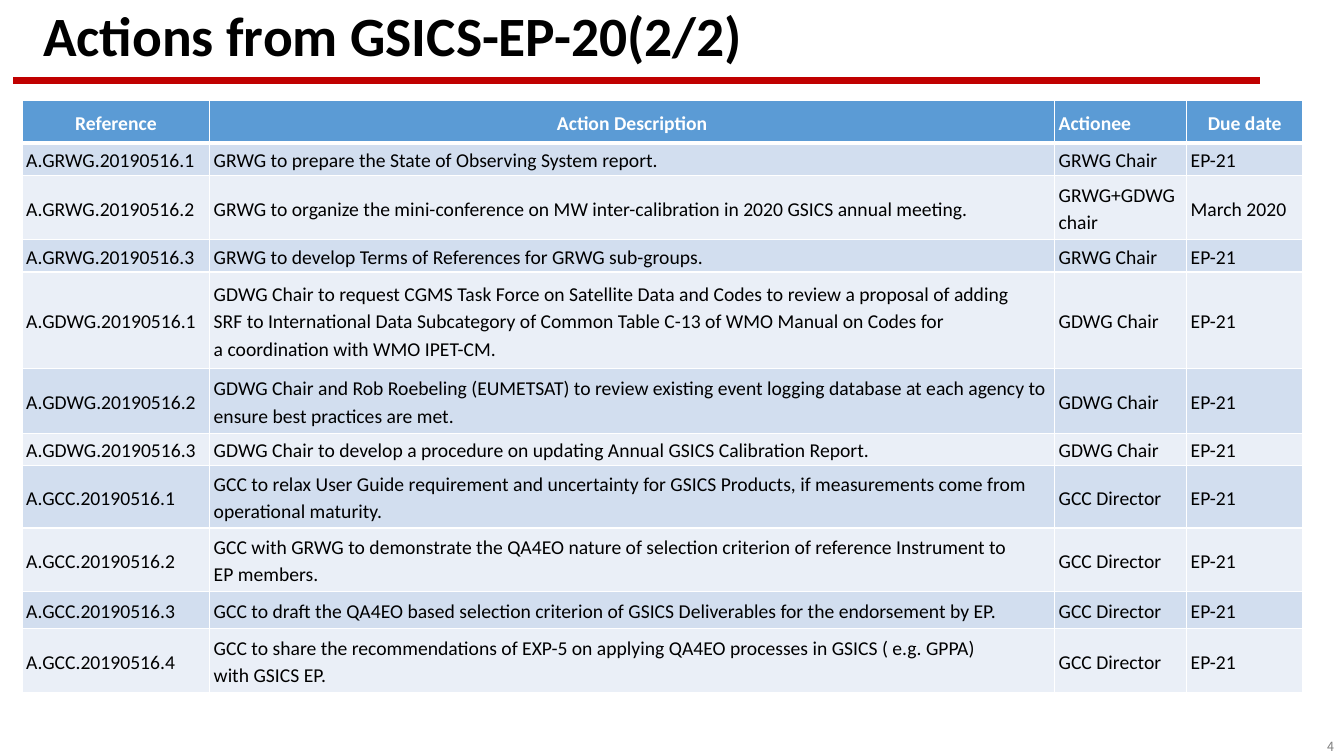
from copy import deepcopy

from pptx import Presentation
from pptx.dml.color import RGBColor
from pptx.enum.shapes import MSO_CONNECTOR
from pptx.enum.text import MSO_ANCHOR as ANCHOR, PP_ALIGN as ALIGN
from pptx.oxml import parse_xml
from pptx.oxml.ns import nsdecls, qn
from pptx.util import Inches, Pt

# Content
TITLE = "Actions from GSICS-EP-20(2/2)"
PAGE_NUMBER = "4"
HEADER = ("Reference", "Action Description", "Actionee", "Due date")
ACTIONS = [
    ("A.GRWG.20190516.1", "GRWG to prepare the State of Observing System report.",
     "GRWG Chair", "EP-21"),
    ("A.GRWG.20190516.2",
     "GRWG to organize the mini-conference on MW inter-calibration in 2020 GSICS annual meeting.",
     "GRWG+GDWG chair", "March 2020"),
    ("A.GRWG.20190516.3", "GRWG to develop Terms of References for GRWG sub-groups.",
     "GRWG Chair", "EP-21"),
    ("A.GDWG.20190516.1",
     "GDWG Chair to request CGMS Task Force on Satellite Data and Codes to review a proposal of adding \n"
     "SRF to International Data Subcategory of Common Table C-13 of WMO Manual on Codes for \n"
     "a coordination with WMO IPET-CM.",
     "GDWG Chair", "EP-21"),
    ("A.GDWG.20190516.2",
     "GDWG Chair and Rob Roebeling (EUMETSAT) to review existing event logging database "
     "at each agency to ensure best practices are met.",
     "GDWG Chair", "EP-21"),
    ("A.GDWG.20190516.3",
     "GDWG Chair to develop a procedure on updating Annual GSICS Calibration Report.",
     "GDWG Chair", "EP-21"),
    ("A.GCC.20190516.1",
     "GCC to relax User Guide requirement and uncertainty for GSICS Products, "
     "if measurements come from \noperational maturity.",
     "GCC Director", "EP-21"),
    ("A.GCC.20190516.2",
     "GCC with GRWG to demonstrate the QA4EO nature of selection criterion "
     "of reference Instrument to \nEP members.",
     "GCC Director", "EP-21"),
    ("A.GCC.20190516.3",
     "GCC to draft the QA4EO based selection criterion of GSICS Deliverables for the endorsement by EP.",
     "GCC Director", "EP-21"),
    ("A.GCC.20190516.4",
     "GCC to share the recommendations of EXP-5 on applying QA4EO processes "
     "in GSICS ( e.g. GPPA) \nwith GSICS EP.",
     "GCC Director", "EP-21"),
]

# Layout, in inches
COL_WIDTHS = (1.86, 8.38, 1.31, 1.15)
ROW_HEIGHTS = (0.42, 0.32, 0.64, 0.32, 0.96, 0.64, 0.32, 0.62, 0.63, 0.37, 0.63)
TABLE_LEFT, TABLE_TOP = 0.22, 1
HEADER_ALIGN = (ALIGN.CENTER, ALIGN.CENTER, ALIGN.LEFT, ALIGN.CENTER)

THEME = {
    "rule": "C00000", "header": "5B9BD5", "bands": ("D2DEEF", "EAEFF7"), "border": "FFFFFF",
    "title": {"size": 39.6, "name": "Calibri", "color": "000000", "bold": True},
    "head": {"size": 14, "name": "Calibri", "color": "FFFFFF", "bold": True},
    "body": {"size": 14, "name": "Calibri", "color": "000000", "bold": False},
    "page": {"size": 9, "name": "Noto Sans CJK KR", "color": "808080", "bold": False},
}


def write(tf, text, style, align=ALIGN.LEFT, spacing=1.0):
    p = tf.paragraphs[0]
    p.text = text.replace("\n", "\v")
    p.alignment, p.line_spacing = align, spacing
    for r in p.runs:
        values = {"size": Pt(style["size"]), "name": style["name"], "bold": style["bold"]}
        for key, value in values.items():
            setattr(r.font, key, value)
        r.font.color.rgb = RGBColor.from_string(style["color"])
    # Line breaks take the text size too
    for br in p._p.findall(qn("a:br")):
        br.append(deepcopy(p.runs[0]._r.rPr))


def add_text(slide, box, text, style, **kwargs):
    tf = slide.shapes.add_textbox(*map(Inches, box)).text_frame
    tf.word_wrap = True
    tf.vertical_anchor = ANCHOR.MIDDLE
    write(tf, text, style, **kwargs)


def set_borders(cell, widths):
    tc_pr = cell._tc.get_or_add_tcPr()
    for i, (side, width) in enumerate(zip("LRTB", widths)):
        tc_pr.insert(i, parse_xml(
            f'<a:ln{side} {nsdecls("a")} w="{Pt(width)}"><a:solidFill>'
            f'<a:srgbClr val="{THEME["border"]}"/></a:solidFill></a:ln{side}>'))


def add_actions(slide):
    rows = [HEADER] + ACTIONS
    frame = slide.shapes.add_table(
        len(rows), len(HEADER), Inches(TABLE_LEFT), Inches(TABLE_TOP),
        Inches(sum(COL_WIDTHS)), Inches(sum(ROW_HEIGHTS)))
    table = frame.table
    table.horz_banding = False
    for column, width in zip(table.columns, COL_WIDTHS):
        column.width = Inches(width)
    for row, height in zip(table.rows, ROW_HEIGHTS):
        row.height = Inches(height)

    cell_format = {"margin_left": Inches(0.04), "margin_right": Inches(0.04),
                   "margin_top": 0, "margin_bottom": 0, "vertical_anchor": ANCHOR.MIDDLE}
    for i, texts in enumerate(rows):
        is_header = i == 0
        fill = THEME["header"] if is_header else THEME["bands"][(i - 1) % 2]
        for j, text in enumerate(texts):
            cell = table.cell(i, j)
            for key, value in cell_format.items():
                setattr(cell, key, value)
            cell.fill.solid()
            cell.fill.fore_color.rgb = RGBColor.from_string(fill)
            set_borders(cell, (1, 1, 3 if i == 1 else 1, 3 if is_header else 1))
            write(cell.text_frame, text, THEME["head" if is_header else "body"],
                  HEADER_ALIGN[j] if is_header else ALIGN.LEFT, 1.15)


def main():
    prs = Presentation()
    prs.slide_width, prs.slide_height = Inches(13.33), Inches(7.5)
    s = prs.slides.add_slide(prs.slide_layouts[6])

    # Red rule under the title
    rule = s.shapes.add_connector(MSO_CONNECTOR.STRAIGHT, *map(Inches, (0.13, 0.8, 12.5, 0.8)))
    rule.line.color.rgb = RGBColor.from_string(THEME["rule"])
    rule.line.width = Pt(4.5)
    rule._element.spPr.append(parse_xml(f'<a:effectLst {nsdecls("a")}/>'))

    # Page number, title and table
    add_text(s, (12.19, 7.28, 1.14, 0.25), PAGE_NUMBER, THEME["page"], align=ALIGN.RIGHT)
    add_text(s, (0.33, 0.08, 11.5, 0.6), TITLE, THEME["title"], spacing=0.9)
    add_actions(s)
    prs.save("out.pptx")


if __name__ == "__main__":
    main()
